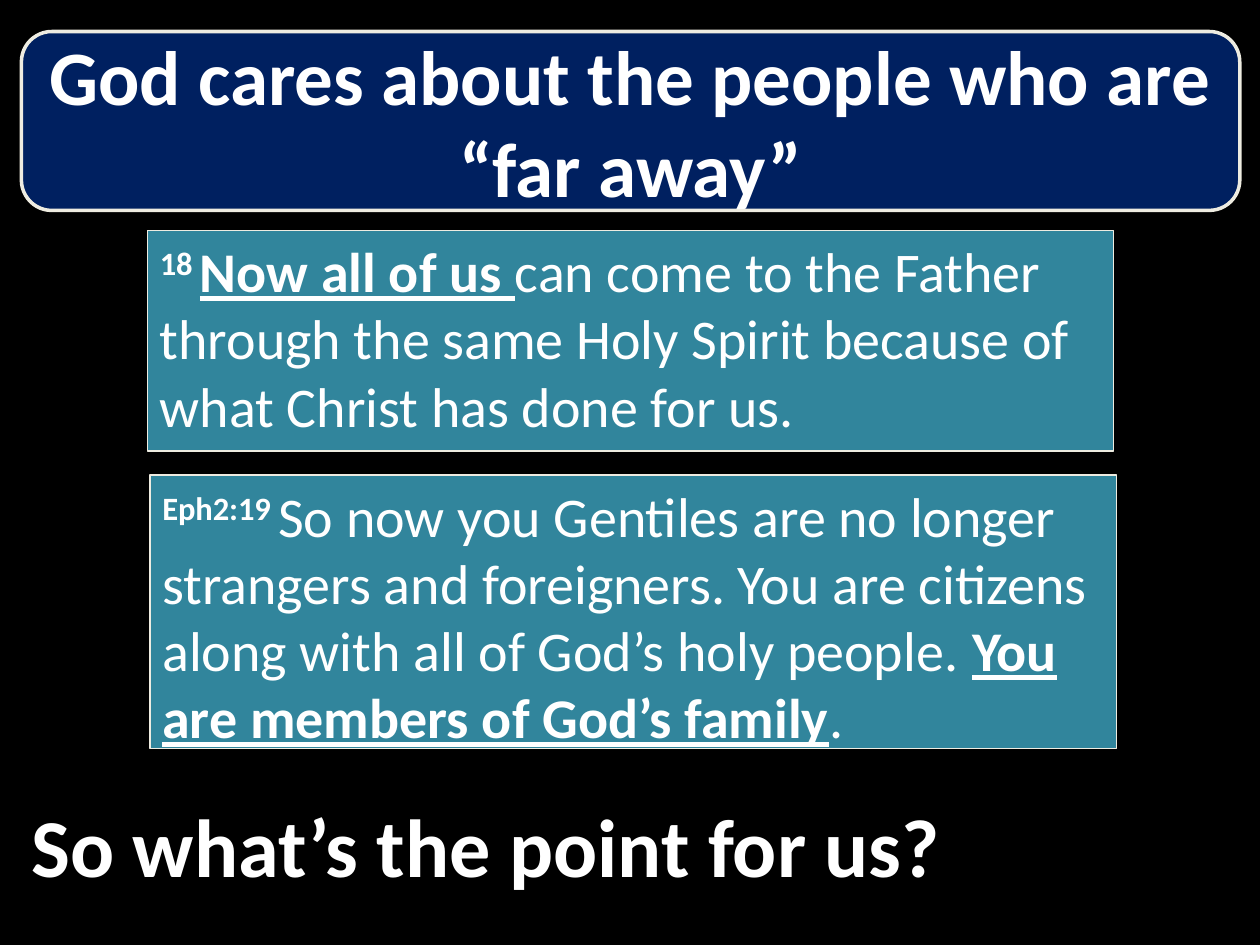
import pptx
import pptx.util
import pptx.dml.color
import pptx.enum.shapes
import pptx.enum.text

WIDE, HIGH = 10, 7.5
FONT = "Calibri"
HUES = {"back": "000000", "navy": "002060", "teal": "31859C",
        "cream": "EEECE1", "text": "FFFFFF"}
KIND = pptx.enum.shapes.MSO_SHAPE
ALIGN = pptx.enum.text.PP_ALIGN
ANCHOR = pptx.enum.text.MSO_ANCHOR


def hue(name):
    """Return a named colour."""
    return pptx.dml.color.RGBColor.from_string(HUES[name])


def add_box(slide, kind, place, fill=None, line=0):
    """Add a flat shape, filled and outlined only if asked."""
    box = slide.shapes.add_shape(kind, *map(pptx.util.Inches, place))
    box.shadow.inherit = False
    if fill:
        box.fill.solid()
        box.fill.fore_color.rgb = hue(fill)
    else:
        box.fill.background()
    if line:
        box.line.color.rgb = hue("cream")
        box.line.width = pptx.util.Pt(line)
    else:
        box.line.fill.background()
    return box


def add_call(slide, place, fill=None, line=0):
    """Add a rounded callout whose tip stays inside its edge."""
    box = add_box(slide, KIND.ROUNDED_RECTANGULAR_CALLOUT, place, fill, line)
    for index, value in enumerate((-0.22, 0.5, 0.17)):
        box.adjustments[index] = value
    return box


def style(part, size, align, bold=None):
    """Set the font and alignment of a paragraph."""
    part.alignment = align
    part.font.name = FONT
    part.font.size = pptx.util.Pt(size)
    part.font.bold = bold
    part.font.color.rgb = hue("text")


def set_head(shape, text, size):
    """Write one bold centred heading in a shape."""
    frame = shape.text_frame
    frame.text = text
    frame.word_wrap = True
    frame.auto_size = pptx.enum.text.MSO_AUTO_SIZE.NONE
    frame.vertical_anchor = ANCHOR.MIDDLE
    style(frame.paragraphs[0], size, ALIGN.CENTER, True)


def add_verse(slide, place, runs):
    """Add a verse panel with raised, strong and plain runs."""
    box = add_box(slide, KIND.RECTANGLE, place, "teal", 0.75)
    box.text_frame.word_wrap = True
    box.text_frame.vertical_anchor = ANCHOR.TOP
    part = box.text_frame.paragraphs[0]
    style(part, 32, ALIGN.LEFT)
    for text, mode in runs:
        run = part.add_run()
        run.text = text
        run.font.bold = mode != "plain"
        run.font.underline = mode == "strong"
        if mode == "raised":
            run.font._element.set("baseline", "30000")


def add_title(slide, place, text):
    """Set the slide title on a navy callout."""
    panel = add_call(slide, place, "navy", 2)
    title = slide.shapes.title
    title.left, title.top, title.width, title.height = map(
        pptx.util.Inches, place)
    set_head(title, text, 44)
    panel.element.addnext(title.element)


def main():
    """Build and save the slide."""
    deck = pptx.Presentation()
    deck.slide_width = pptx.util.Inches(WIDE)
    deck.slide_height = pptx.util.Inches(HIGH)
    slide = deck.slides.add_slide(deck.slide_layouts[5])
    slide.background.fill.solid()
    slide.background.fill.fore_color.rgb = hue("back")

    point = add_call(slide, (-0.08, 6.08, 7.88, 1.25))
    set_head(point, "So what’s the point for us?", 47)
    add_title(slide, (0.17, 0.25, 9.67, 1.42),
              "God cares about the people who are “far away”")
    add_verse(slide, (1.17, 1.83, 7.67, 1.75), [
        ("18 ", "raised"),
        ("Now all of us ", "strong"),
        ("can come to the Father through the same Holy Spirit "
         "because of what Christ has done for us.", "plain")])
    add_verse(slide, (1.19, 3.77, 7.67, 2.17), [
        ("Eph2:19 ", "raised"),
        ("So now you Gentiles are no longer strangers and foreigners. "
         "You are citizens along with all of God’s holy people. ", "plain"),
        ("You are members of God’s family", "strong"),
        (".", "plain")])
    deck.save("out.pptx")


if __name__ == "__main__":
    main()
